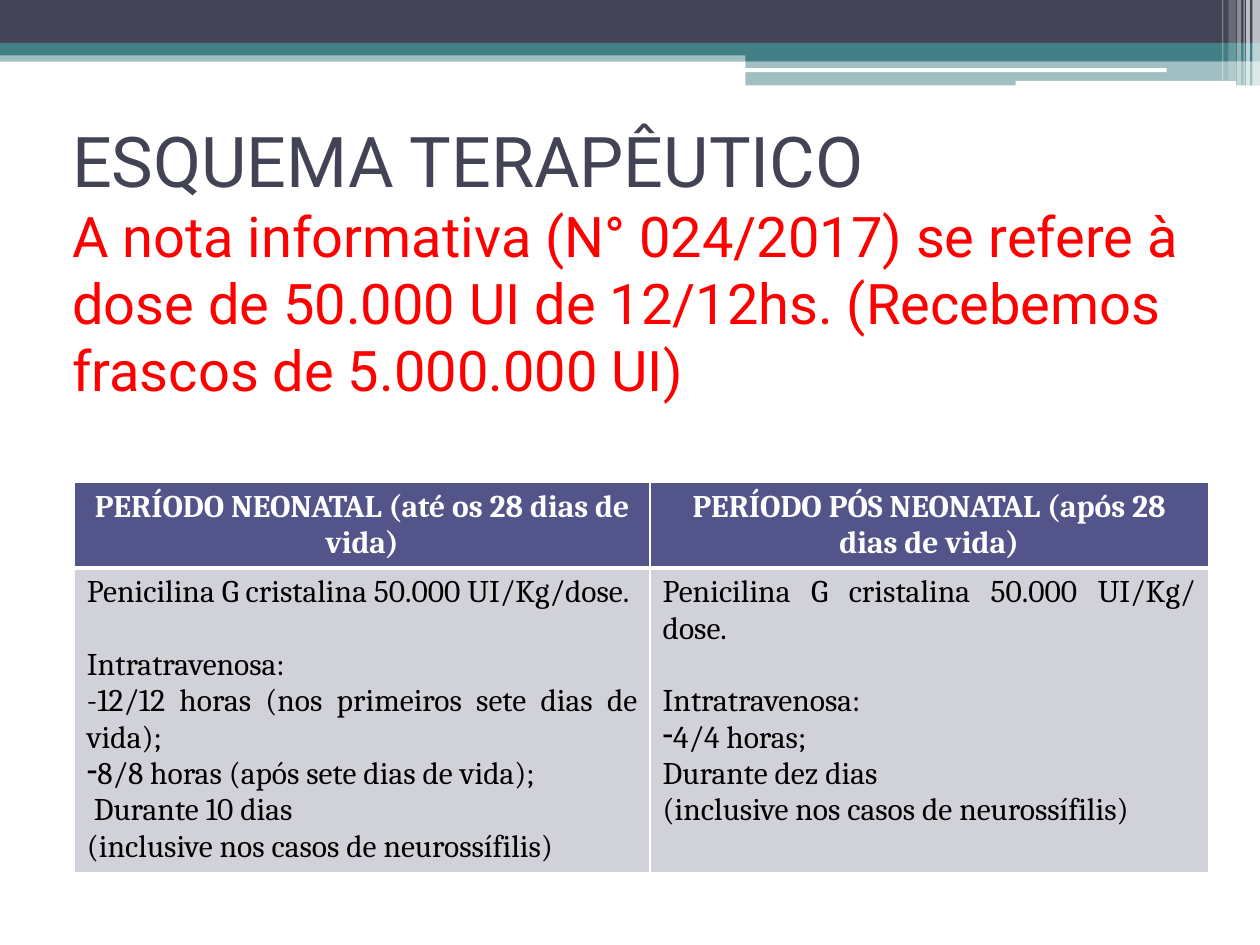
from dataclasses import dataclass

from lxml.etree import SubElement
from pptx import Presentation
from pptx.dml.color import RGBColor
from pptx.enum.shapes import MSO_SHAPE
from pptx.enum.text import MSO_ANCHOR, MSO_AUTO_SIZE, PP_ALIGN
from pptx.oxml.ns import qn
from pptx.util import Pt


@dataclass(frozen=True)
class Theme:
    navy: str = "424456"
    teal: str = "438086"
    white: str = "FFFFFF"
    black: str = "000000"
    red: str = "FF0000"
    header: str = "53548A"
    body: str = "D1D1DA"
    title_font: str = "Roboto"
    table_font: str = "Cambria"
    title_size: int = 40
    note_size: int = 32
    table_size: int = 18


THEME = Theme()

# shape, left, top, width, height, colour, opacity in percent
BANDS = [
    (MSO_SHAPE.RECTANGLE, 0, 28.8, 720, 6.5, THEME.teal, 50),
    (MSO_SHAPE.RECTANGLE, 0, 0, 720, 24.5, THEME.navy, 100),
    (MSO_SHAPE.RECTANGLE, 0, 24.5, 720, 7.2, THEME.teal, 100),
    (MSO_SHAPE.RECTANGLE, 426, 28, 294, 7, THEME.teal, 100),
    (MSO_SHAPE.RECTANGLE, 426, 34.6, 294, 14.2, THEME.teal, 50),
    (MSO_SHAPE.ROUNDED_RECTANGLE, 425.5, 39, 241.2, 2.2, THEME.white, 100),
    (MSO_SHAPE.ROUNDED_RECTANGLE, 580.3, 46.2, 126, 2.9, THEME.white, 100),
]
# left, width, height, opacity in percent
STRIPES = [
    (715.7, 4.3, 49, 65),
    (712.1, 2.2, 49, 65),
    (710.6, 0.7, 49, 60),
    (707, 2.2, 49, 40),
    (702, 4.3, 46, 20),
    (698.4, 0.7, 46, 30),
]

HEADINGS = [
    "PERÍODO NEONATAL (até os 28 dias de vida)",
    "PERÍODO PÓS NEONATAL (após 28 dias de vida)",
]
# text, has a dash bullet, has a gap above
TREATMENTS = [
    [
        ("Penicilina G cristalina 50.000 UI/Kg/dose.", False, False),
        ("Intratravenosa:", False, True),
        ("-12/12 horas (nos primeiros sete dias de vida);", False, False),
        ("8/8 horas (após sete dias de vida);", True, False),
        (" Durante 10 dias", False, False),
        ("(inclusive nos casos de neurossífilis)", False, False),
    ],
    [
        ("Penicilina G cristalina 50.000 UI/Kg/ dose.", False, False),
        ("Intratravenosa:", False, True),
        ("4/4 horas;", True, False),
        ("Durante dez dias ", False, False),
        ("(inclusive nos casos de neurossífilis)", False, False),
    ],
]


def add_span(para, text, *, size, color, font, bold=False):
    span = para.add_run()
    span.text = text
    span.font.size = Pt(size)
    span.font.name = font
    span.font.bold = bold
    span.font.color.rgb = RGBColor.from_string(color)


def add_band(slide, kind, left, top, width, height, color, opacity):
    band = slide.shapes.add_shape(kind, Pt(left), Pt(top), Pt(width), Pt(height))
    band.shadow.inherit = False
    band.line.fill.background()
    band.fill.solid()
    band.fill.fore_color.rgb = RGBColor.from_string(color)
    if opacity < 100:
        color_node = band._element.spPr.find(f"{qn('a:solidFill')}/{qn('a:srgbClr')}")
        SubElement(color_node, qn("a:alpha"), val=str(opacity * 1000))


def set_title(slide):
    title = slide.shapes.title
    title.left, title.top, title.width, title.height = Pt(34), Pt(44.6), Pt(648), Pt(208)
    frame = title.text_frame
    frame.word_wrap = True
    frame.auto_size = MSO_AUTO_SIZE.NONE
    frame.vertical_anchor = MSO_ANCHOR.MIDDLE
    para = frame.paragraphs[0]
    para.alignment = PP_ALIGN.LEFT
    add_span(para, "ESQUEMA TERAPÊUTICO", size=THEME.title_size,
             color=THEME.navy, font=THEME.title_font)
    para.add_line_break()
    add_span(para, "A nota informativa (N° 024/2017) se refere à dose de 50.000 UI "
             "de 12/12hs. (Recebemos frascos de 5.000.000 UI)",
             size=THEME.note_size, color=THEME.red, font=THEME.title_font)


def add_dash(para):
    properties = para._p.get_or_add_pPr()
    properties.set("marL", "0")
    properties.set("indent", "0")
    SubElement(properties, qn("a:buFontTx"))
    SubElement(properties, qn("a:buChar"), char="-")


def style_cell(cell, color, **thick_sides):
    """Fill a cell and give it white borders, 1 pt unless a side says otherwise."""
    properties = cell._tc.get_or_add_tcPr()
    for side in ("lnL", "lnR", "lnT", "lnB"):
        line = SubElement(properties, qn(f"a:{side}"), w=str(Pt(thick_sides.get(side, 1))))
        fill = SubElement(line, qn("a:solidFill"))
        SubElement(fill, qn("a:srgbClr"), val=THEME.white)
    cell.fill.solid()
    cell.fill.fore_color.rgb = RGBColor.from_string(color)


def fill_heading(cell, text):
    style_cell(cell, THEME.header, lnB=3)
    para = cell.text_frame.paragraphs[0]
    para.alignment = PP_ALIGN.CENTER
    add_span(para, text, size=THEME.table_size, color=THEME.white,
             font=THEME.table_font, bold=True)


def fill_treatment(cell, lines):
    style_cell(cell, THEME.body, lnT=3)
    frame = cell.text_frame
    for index, (text, dashed, gap) in enumerate(lines):
        para = frame.add_paragraph() if index else frame.paragraphs[0]
        para.alignment = PP_ALIGN.JUSTIFY
        if gap:
            para.space_before = Pt(20.8)
        if dashed:
            add_dash(para)
        add_span(para, text, size=THEME.table_size, color=THEME.black,
                 font=THEME.table_font)


def add_treatment_table(slide):
    widths, heights = (329, 319), (48, 174)
    table = slide.shapes.add_table(2, 2, Pt(42.5), Pt(275.8),
                                   Pt(sum(widths)), Pt(sum(heights))).table
    for row, height in zip(table.rows, heights):
        row.height = Pt(height)
    for index, width in enumerate(widths):
        table.columns[index].width = Pt(width)
        fill_heading(table.cell(0, index), HEADINGS[index])
        fill_treatment(table.cell(1, index), TREATMENTS[index])


def main():
    deck = Presentation()
    deck.slide_width, deck.slide_height = Pt(720), Pt(540)
    slide = deck.slides.add_slide(deck.slide_layouts[5])
    for band in BANDS:
        add_band(slide, *band)
    for left, width, height, opacity in STRIPES:
        add_band(slide, MSO_SHAPE.RECTANGLE, left, 0, width, height, THEME.white, opacity)
    set_title(slide)
    add_treatment_table(slide)
    deck.save("out.pptx")


if __name__ == "__main__":
    main()
